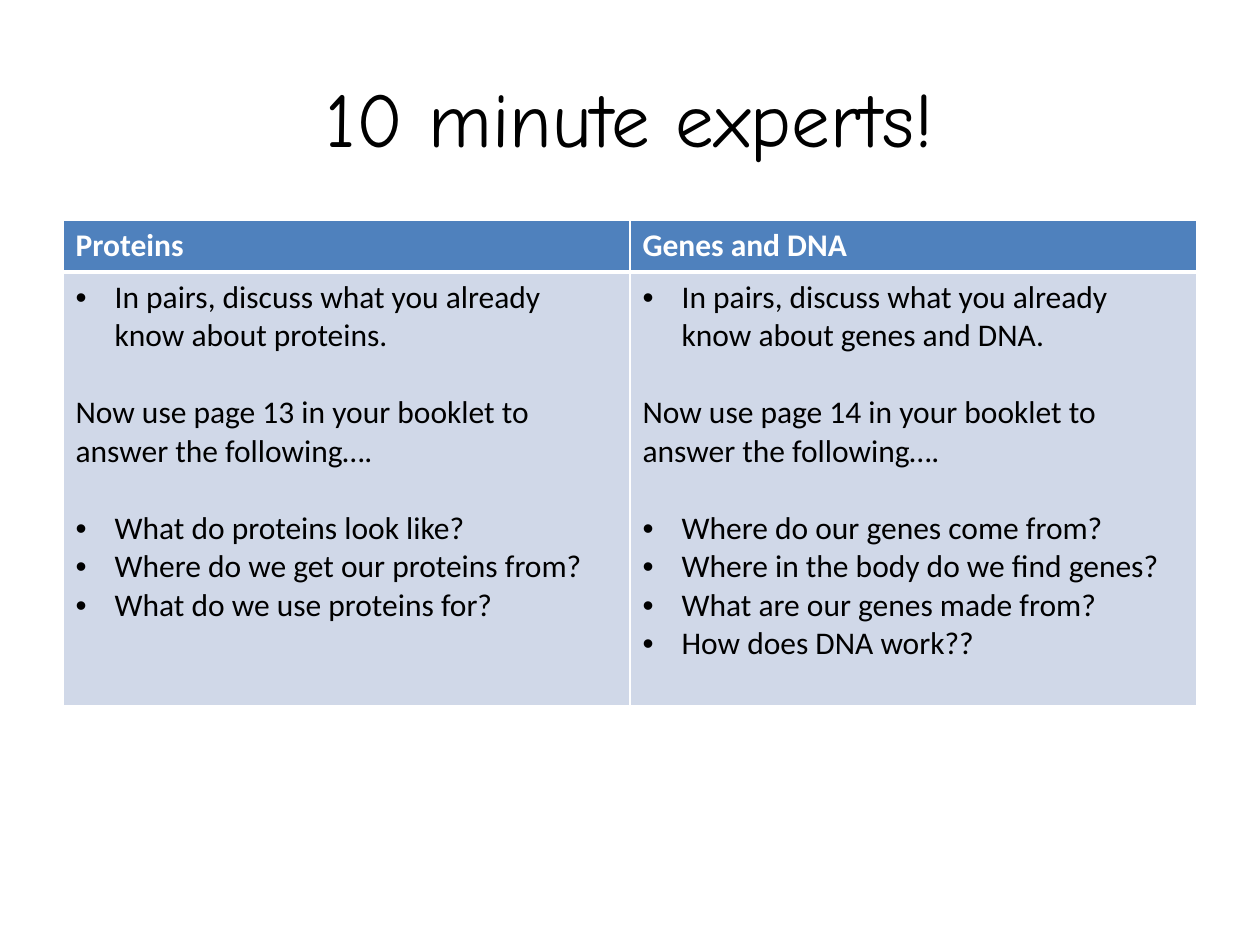
from lxml import etree
from pptx import Presentation
from pptx.dml.color import RGBColor
from pptx.enum.text import MSO_ANCHOR, PP_ALIGN
from pptx.oxml.ns import qn
from pptx.util import Inches, Pt

CENTER = PP_ALIGN.CENTER
MIDDLE = MSO_ANCHOR.MIDDLE
WHITE = RGBColor(0xFF, 0xFF, 0xFF)
BLACK = RGBColor(0, 0, 0)
HEADER_BLUE = RGBColor(0x4F, 0x81, 0xBD)
BODY_BLUE = RGBColor(0xD0, 0xD8, 0xE8)
TITLE_FONT = "Comic Neue"
BODY_FONT = "Calibri"
TITLE_ONLY = 5
SECTION_GAP = 22
BULLET_INDENT = Inches(0.31)

TOPICS = [
    {
        "heading": "Proteins",
        "discuss": "In pairs, discuss what you already know about proteins.",
        "reading": "Now use page 13 in your booklet to answer the following….",
        "questions": [
            "What do proteins look like?",
            "Where do we get our proteins from?",
            "What do we use proteins for?",
        ],
    },
    {
        "heading": "Genes and DNA",
        "discuss": "In pairs, discuss what you already know about genes and DNA.",
        "reading": "Now use page 14 in your booklet to answer the following….",
        "questions": [
            "Where do our genes come from?",
            "Where in the body do we find genes?",
            "What are our genes made from?",
            "How does DNA work??",
        ],
    },
]


def write_paragraph(paragraph, text, size=18, font=BODY_FONT, color=BLACK,
                    bold=False, align=None, bullet=False, space_before=0):
    """Fill one paragraph with formatted text."""
    if bullet:
        properties = paragraph._p.get_or_add_pPr()
        properties.set("marL", str(BULLET_INDENT))
        properties.set("indent", str(-BULLET_INDENT))
        etree.SubElement(properties, qn("a:buFont"), typeface="Arial")
        etree.SubElement(properties, qn("a:buChar"), char="•")
    paragraph.alignment = align
    paragraph.space_before = Pt(space_before)
    run = paragraph.add_run()
    run.text = text
    run.font.size = Pt(size)
    run.font.name = font
    run.font.bold = bold
    run.font.color.rgb = color


def style_cell(cell, fill, top=1, bottom=1):
    """Give a cell white borders, in points, and a solid fill."""
    properties = cell._tc.get_or_add_tcPr()
    widths = {"a:lnL": 1, "a:lnR": 1, "a:lnT": top, "a:lnB": bottom}
    for tag, width in widths.items():
        line = etree.SubElement(properties, qn(tag), w=str(Pt(width)))
        line_fill = etree.SubElement(line, qn("a:solidFill"))
        etree.SubElement(line_fill, qn("a:srgbClr"), val=str(WHITE))
    cell.fill.solid()
    cell.fill.fore_color.rgb = fill


def place_title(slide, text, left, top, width, height):
    """Place and format the slide title."""
    title = slide.shapes.title
    title.left, title.top, title.width, title.height = left, top, width, height
    title.text_frame.vertical_anchor = MIDDLE
    write_paragraph(title.text_frame.paragraphs[0], text, size=44,
                    font=TITLE_FONT, align=CENTER)


def fill_topic_cell(cell, topic):
    """Write the discussion, the reading and the questions of a topic."""
    text_frame = cell.text_frame
    write_paragraph(text_frame.paragraphs[0], topic["discuss"], bullet=True)
    write_paragraph(text_frame.add_paragraph(), topic["reading"],
                    space_before=SECTION_GAP)
    for index, question in enumerate(topic["questions"]):
        write_paragraph(text_frame.add_paragraph(), question, bullet=True,
                        space_before=0 if index else SECTION_GAP)


def place_topic_table(slide, topics, left, top, width, height):
    """Place the table with one column for each topic."""
    header_height = Inches(0.41)
    table = slide.shapes.add_table(2, len(topics), left, top, width, height).table
    table.rows[0].height = header_height
    table.rows[1].height = height - header_height
    for column, topic in enumerate(topics):
        header, body = table.cell(0, column), table.cell(1, column)
        style_cell(header, HEADER_BLUE, bottom=3)
        style_cell(body, BODY_BLUE, top=3)
        write_paragraph(header.text_frame.paragraphs[0], topic["heading"],
                        color=WHITE, bold=True)
        fill_topic_cell(body, topic)


def main():
    """Build and save the presentation."""
    presentation = Presentation()
    presentation.slide_width = Inches(10)
    presentation.slide_height = Inches(7.5)
    slide = presentation.slides.add_slide(presentation.slide_layouts[TITLE_ONLY])
    left, width = Inches(0.5), Inches(9)
    place_title(slide, "10 minute experts!", left, Inches(0.3), width, Inches(1.25))
    place_topic_table(slide, TOPICS, left, Inches(1.75), width, Inches(3.85))
    presentation.save("out.pptx")


if __name__ == "__main__":
    main()
